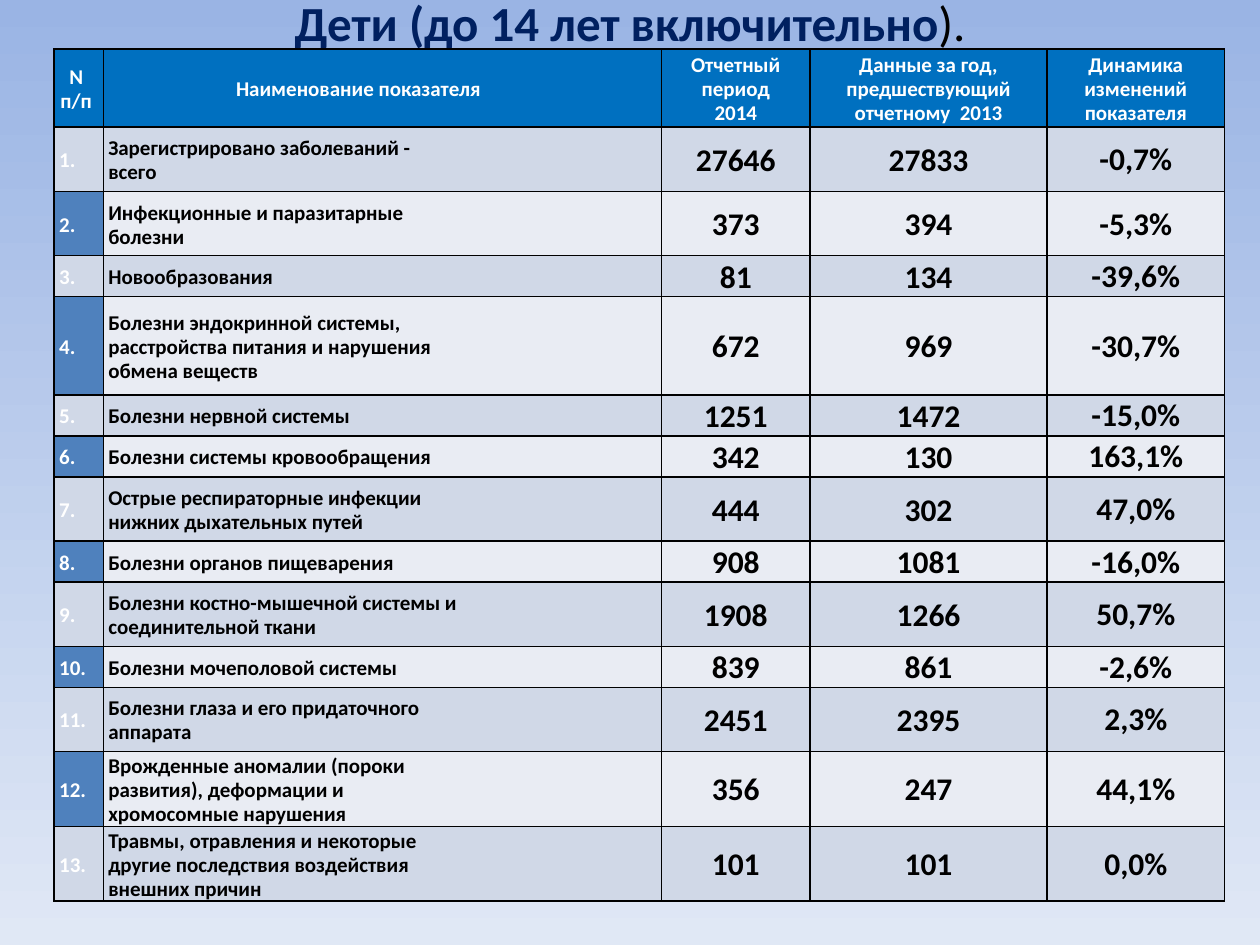
from pptx import Presentation
from pptx.dml.color import RGBColor
from pptx.enum.text import MSO_ANCHOR as Anchor, MSO_AUTO_SIZE as AutoSize, PP_ALIGN as Align
from pptx.oxml import parse_xml
from pptx.oxml.ns import nsdecls, qn
from pptx.util import Inches, Pt

NAVY = RGBColor(0x00, 0x20, 0x60)
BLACK = RGBColor(0x00, 0x00, 0x00)
WHITE = RGBColor(0xFF, 0xFF, 0xFF)
HEADER_BLUE = RGBColor(0x00, 0x70, 0xC0)
NUMBER_BLUE = RGBColor(0x4F, 0x81, 0xBD)
BAND_DARK = RGBColor(0xD0, 0xD8, 0xE7)
BAND_LIGHT = RGBColor(0xE9, 0xEC, 0xF3)
SKY_TOP = RGBColor(0x9A, 0xB4, 0xE4)
SKY_BOTTOM = RGBColor(0xE0, 0xE8, 0xF5)

HEADERS = ["N\nп/п", "Наименование показателя", "Отчетный\nпериод\n2014",
           "Данные за год,\nпредшествующий\nотчетному  2013", "Динамика\nизменений\nпоказателя"]

# Indicator, 2014, 2013, change, row height
INDICATORS = [
    ("Зарегистрировано заболеваний -\nвсего", "27646", "27833", "-0,7%", 0.51),
    ("Инфекционные и паразитарные\nболезни", "373", "394", "-5,3%", 0.51),
    ("Новообразования", "81", "134", "-39,6%", 0.32),
    ("Болезни эндокринной системы,\nрасстройства питания и нарушения\nобмена веществ",
     "672", "969", "-30,7%", 0.78),
    ("Болезни нервной системы", "1251", "1472", "-15,0%", 0.32),
    ("Болезни системы кровообращения", "342", "130", "163,1%", 0.32),
    ("Острые респираторные инфекции\nнижних дыхательных путей", "444", "302", "47,0%", 0.51),
    ("Болезни органов пищеварения", "908", "1081", "-16,0%", 0.32),
    ("Болезни костно-мышечной системы и\nсоединительной ткани", "1908", "1266", "50,7%", 0.51),
    ("Болезни мочеполовой системы", "839", "861", "-2,6%", 0.32),
    ("Болезни глаза и его придаточного\nаппарата", "2451", "2395", "2,3%", 0.51),
    ("Врожденные аномалии (пороки\nразвития), деформации и\nхромосомные нарушения",
     "356", "247", "44,1%", 0.59),
    ("Травмы, отравления и некоторые\nдругие последствия воздействия\nвнешних причин",
     "101", "101", "0,0%", 0.59),
]

COLUMN_WIDTHS = [0.39, 4.43, 1.18, 1.88, 1.41]
HEADER_HEIGHT = 0.62
HEADER_RIGHT_MARGINS = [0.08, 0.42, 0.04, 0.04, 0.04]


class SlideBuilder:
    font_name = "Calibri"
    label_size = 12
    value_size = 18
    title_size = 28

    def __init__(self, presentation):
        self.slide = presentation.slides.add_slide(presentation.slide_layouts[5])

    def background(self, top, bottom):
        fill = self.slide.background.fill
        fill.gradient()
        fill.gradient_angle = 270
        for stop, position, color in zip(fill.gradient_stops, (0, 1), (top, bottom)):
            stop.position = position
            stop.color.rgb = color

    def style(self, run, size, color, bold=True):
        font_format = {"name": self.font_name, "size": Pt(size), "bold": bold}
        for name, value in font_format.items():
            setattr(run.font, name, value)
        run.font.color.rgb = color

    def title(self, parts, left, top, width, height):
        title = self.slide.shapes.title
        box = {"left": left, "top": top, "width": width, "height": height}
        for name, value in box.items():
            setattr(title, name, Inches(value))
        frame_format = {"auto_size": AutoSize.NONE, "vertical_anchor": Anchor.MIDDLE,
                        "margin_top": 0, "margin_bottom": Inches(0.31)}
        for name, value in frame_format.items():
            setattr(title.text_frame, name, value)
        paragraph = title.text_frame.paragraphs[0]
        paragraph.alignment = Align.CENTER
        for text, color, bold in parts:
            run = paragraph.add_run()
            run.text = text
            self.style(run, self.title_size, color, bold)

    def borders(self, cell):
        properties = cell._tc.get_or_add_tcPr()
        for index, side in enumerate("LRTB"):
            properties.insert(index, parse_xml(
                f'<a:ln{side} {nsdecls("a")} w="12700"><a:solidFill>'
                f'<a:srgbClr val="{BLACK}"/></a:solidFill></a:ln{side}>'))

    def cell(self, cell, text, fill, color, size, alignment, side=0.04, right=None):
        cell_format = {
            "margin_left": Inches(side),
            "margin_right": Inches(side if right is None else right),
            "margin_top": Inches(0.02 if side > 0.01 else 0.01),
            "margin_bottom": 0,
            "vertical_anchor": Anchor.MIDDLE,
        }
        for name, value in cell_format.items():
            setattr(cell, name, value)
        cell.fill.solid()
        cell.fill.fore_color.rgb = fill
        self.borders(cell)
        paragraph = cell.text_frame.paragraphs[0]
        paragraph.text = text
        paragraph.alignment = alignment
        if size == self.label_size:
            paragraph.line_spacing = 0.94
        for run in paragraph.runs:
            self.style(run, size, color)
        # Line breaks take the text size too, so they do not stretch the lines
        for line_break in paragraph._p.findall(qn("a:br")):
            line_break.append(parse_xml(f'<a:rPr {nsdecls("a")} sz="{size * 100}"/>'))

    def table(self, left, top):
        heights = [HEADER_HEIGHT] + [indicator[-1] for indicator in INDICATORS]
        frame = self.slide.shapes.add_table(
            len(heights), len(COLUMN_WIDTHS), Inches(left), Inches(top),
            Inches(sum(COLUMN_WIDTHS)), Inches(sum(heights)))
        table = frame.table
        table.horz_banding = False
        for column, width in zip(table.columns, COLUMN_WIDTHS):
            column.width = Inches(width)
        for row, height in zip(table.rows, heights):
            row.height = Inches(height)

        # Header row
        for column, (text, right) in enumerate(zip(HEADERS, HEADER_RIGHT_MARGINS)):
            self.cell(table.cell(0, column), text, HEADER_BLUE, WHITE,
                      self.label_size, Align.CENTER, right=right)

        # Numbered indicator rows in alternating bands
        for row, (name, current, previous, change, _) in enumerate(INDICATORS, 1):
            odd = row % 2 == 1
            band = BAND_DARK if odd else BAND_LIGHT
            self.cell(table.cell(row, 0), f"{row}.", BAND_DARK if odd else NUMBER_BLUE,
                      WHITE, self.label_size, Align.LEFT)
            self.cell(table.cell(row, 1), name, band, BLACK, self.label_size, Align.LEFT)
            for column, value in enumerate((current, previous, change), 2):
                self.cell(table.cell(row, column), value, band, BLACK, self.value_size,
                          Align.CENTER, side=0.01 if column == 4 else 0.04)


def main():
    presentation = Presentation()
    presentation.slide_width = Inches(10)
    presentation.slide_height = Inches(7.5)
    builder = SlideBuilder(presentation)
    builder.background(SKY_TOP, SKY_BOTTOM)
    builder.title([("Дети (до 14 лет включительно", NAVY, True), (").", BLACK, False)],
                  0.5, 0.02, 9, 0.61)
    builder.table(0.43, 0.39)
    presentation.save("out.pptx")


if __name__ == "__main__":
    main()
